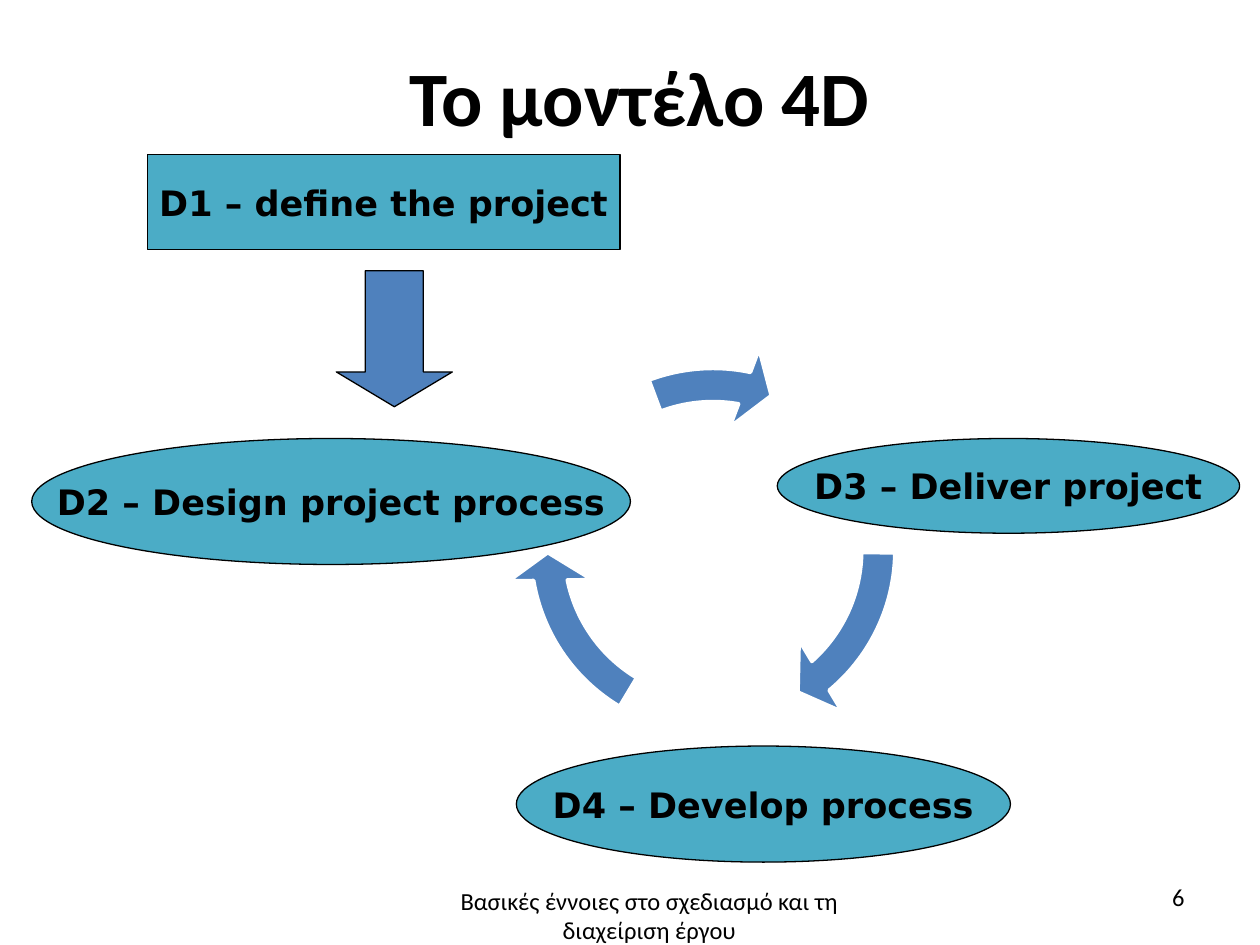
import dataclasses

import pptx
import pptx.dml.color
import pptx.enum.shapes
import pptx.enum.text
import pptx.util

Cm = pptx.util.Cm
Pt = pptx.util.Pt
Shape = pptx.enum.shapes.MSO_SHAPE
Align = pptx.enum.text.PP_ALIGN
Anchor = pptx.enum.text.MSO_ANCHOR


@dataclasses.dataclass(frozen=True)
class Theme:
    ink: str = "000000"
    paper: str = "FFFFFF"
    stage: str = "4BACC6"
    arrow: str = "4F81BD"
    text_font: str = "Calibri"
    stage_font: str = "DejaVu Sans"
    title_size: int = 44
    stage_size: int = 20
    footer_size: int = 14


def color(code):
    return pptx.dml.color.RGBColor.from_string(code)


class SlideBuilder:
    def __init__(self, slide, theme):
        self.slide = slide
        self.theme = theme

    def set_text(self, box, text, font, size, bold=False, align=Align.CENTER):
        box.text_frame.text = text
        para = box.text_frame.paragraphs[0]
        para.alignment = align
        para.font.name = font
        para.font.size = Pt(size)
        para.font.bold = bold
        para.font.color.rgb = color(self.theme.ink)

    def title(self, text, left, top, width, height):
        box = self.slide.shapes.title
        box.left, box.top, box.width, box.height = map(Cm, (left, top, width, height))
        box.text_frame.vertical_anchor = Anchor.MIDDLE
        self.set_text(box, text, self.theme.text_font, self.theme.title_size, bold=True)

    def footer(self, text, left, top, width, height, align=Align.CENTER):
        box = self.slide.shapes.add_textbox(*map(Cm, (left, top, width, height)))
        box.text_frame.word_wrap = True
        self.set_text(box, text, self.theme.text_font, self.theme.footer_size, align=align)

    def shape(self, parent, kind, bounds, fill, line, line_width):
        shape = parent.add_shape(kind, *map(Cm, bounds))
        shape.shadow.inherit = False
        shape.fill.solid()
        shape.fill.fore_color.rgb = color(fill)
        shape.line.color.rgb = color(line)
        shape.line.width = Pt(line_width)
        return shape

    def stage(self, text, kind, *bounds):
        box = self.shape(self.slide.shapes, kind, bounds, self.theme.stage, self.theme.ink, 0.75)
        box.text_frame.word_wrap = False
        box.text_frame.vertical_anchor = Anchor.MIDDLE
        self.set_text(box, text, self.theme.stage_font, self.theme.stage_size, bold=True)

    def down_arrow(self, *bounds):
        arrow = self.shape(self.slide.shapes, Shape.DOWN_ARROW, bounds,
                           self.theme.arrow, self.theme.ink, 0.75)
        arrow.adjustments[1] = 0.3

    def cycle(self, left, top, size, arcs):
        """Draw arrows on one circle; arcs are (start, end) degrees, clockwise from the right."""
        units_per_degree = 0.6
        group = self.slide.shapes.add_group_shape()
        for start, end in arcs:
            arrow = self.shape(group.shapes, Shape.CIRCULAR_ARROW, (left, top, size, size),
                               self.theme.arrow, self.theme.paper, 2)
            values = (0.08, 9.59 * units_per_degree, end * units_per_degree,
                      start * units_per_degree, 0.1)
            for index, value in enumerate(values):
                arrow.adjustments[index] = value


def main():
    deck = pptx.Presentation()
    deck.slide_width, deck.slide_height = Cm(25.4), Cm(19.05)
    title_only = deck.slide_layouts[5]
    page = SlideBuilder(deck.slides.add_slide(title_only), Theme())

    page.title("Το μοντέλο 4D", 1.3, 0.13, 23.19, 3.61)
    page.stage("D2 – Design project process", Shape.OVAL, 0.64, 8.84, 12.07, 2.54)
    page.footer("Βασικές έννοιες στο σχεδιασμό και τη διαχείριση έργου",
                8.66, 17.73, 8.86, 1.4)
    page.footer("6", 18.21, 17.65, 5.92, 1.02, Align.RIGHT)
    page.cycle(10.21, 6.93, 8.33, [(0.83, 49.45), (120.96, 169.58), (249.42, 281)])
    page.stage("D1 – define the project", Shape.RECTANGLE, 2.97, 3.12, 9.53, 1.91)
    page.down_arrow(6.78, 5.46, 2.34, 2.74)
    page.stage("D3 – Deliver project", Shape.OVAL, 15.67, 8.84, 9.32, 1.91)
    page.stage("D4 – Develop process", Shape.OVAL, 10.41, 15.04, 9.96, 2.34)

    deck.save("out.pptx")


if __name__ == "__main__":
    main()
